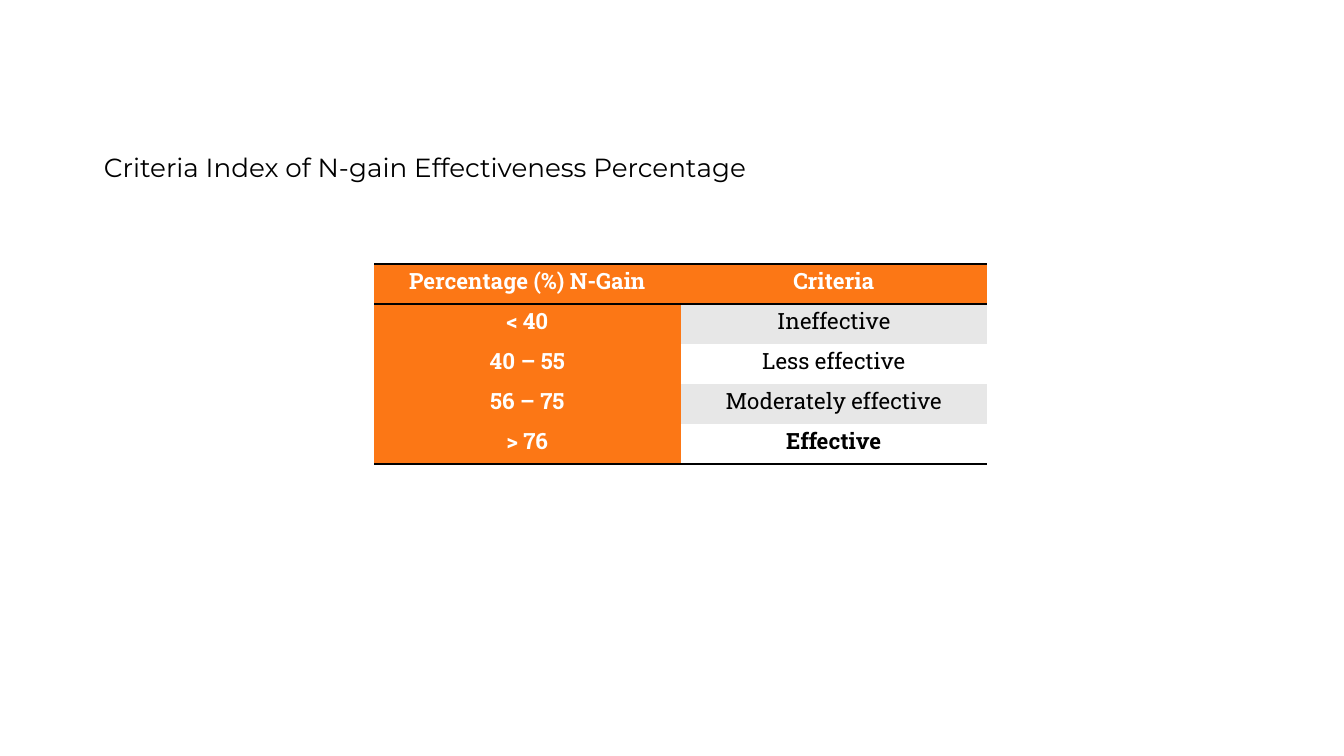
from lxml import etree
from pptx import Presentation
from pptx.dml.color import RGBColor
from pptx.enum.text import MSO_ANCHOR, PP_ALIGN
from pptx.oxml.ns import qn
from pptx.util import Inches, Pt

LEFT, CENTER = PP_ALIGN.LEFT, PP_ALIGN.CENTER
TOP = MSO_ANCHOR.TOP

TITLE = "Criteria Index of N-gain Effectiveness Percentage"
ROWS = [
    ("Percentage (%) N-Gain", "Criteria"),
    ("< 40", "Ineffective"),
    ("40 – 55", "Less effective"),
    ("56 – 75", "Moderately effective"),
    ("> 76", "Effective"),
]
ORANGE, GREY, WHITE, BLACK = "FC7715", "E7E7E7", "FFFFFF", "000000"
TABLE_LEFT, TABLE_TOP = 3.71, 2.62
COL_W, ROW_H = 3.04, 0.397
RULE_PT = 2


def rgb(color):
    return RGBColor.from_string(color)


def write(tf, text, font, size, color=BLACK, bold=False, align=LEFT, spacing=1.0):
    p = tf.paragraphs[0]
    p.alignment = align
    p.line_spacing = spacing
    r = p.add_run()
    r.text = text
    r.font.name, r.font.size, r.font.bold = font, Pt(size), bold
    r.font.color.rgb = rgb(color)


def set_borders(cell, ruled):
    """Draw black rules on the sides named in ruled and clear the others."""
    tcPr = cell._tc.get_or_add_tcPr()
    for i, side in enumerate("LRTB"):
        ln = etree.Element(qn(f"a:ln{side}"))
        if side in ruled:
            ln.set("w", str(Pt(RULE_PT)))
            fill = etree.SubElement(ln, qn("a:solidFill"))
            etree.SubElement(fill, qn("a:srgbClr"), val=BLACK)
        else:
            etree.SubElement(ln, qn("a:noFill"))
        tcPr.insert(i, ln)


def add_title(s):
    title = s.shapes.title
    title.left, title.top = Inches(0.9), Inches(1.32)
    title.width, title.height = Inches(9.24), Inches(0.84)
    tf = title.text_frame
    tf.word_wrap = True
    tf.vertical_anchor = TOP
    tf.margin_left = tf.margin_right = tf.margin_top = tf.margin_bottom = Inches(0.13)
    write(tf, TITLE, "Montserrat", 18.7, spacing=1.15)


def add_criteria_table(s):
    n_rows, n_cols = len(ROWS), len(ROWS[0])
    table = s.shapes.add_table(
        n_rows, n_cols, Inches(TABLE_LEFT), Inches(TABLE_TOP),
        Inches(COL_W * n_cols), Inches(ROW_H * n_rows)).table
    table.first_row = table.horz_banding = False
    last = n_rows - 1
    for i, row in enumerate(ROWS):
        table.rows[i].height = Inches(ROW_H)
        ruled = ("T" if i in (0, 1) else "") + ("B" if i in (0, last) else "")
        for j, text in enumerate(row):
            cell = table.cell(i, j)
            heading = i == 0 or j == 0
            cell.margin_left = cell.margin_right = Inches(0.1)
            cell.margin_top = cell.margin_bottom = 0
            cell.vertical_anchor = TOP
            cell.fill.solid()
            cell.fill.fore_color.rgb = rgb(ORANGE if heading else GREY if i % 2 else WHITE)
            set_borders(cell, ruled)
            write(cell.text_frame, text, "Roboto Slab", 16,
                  color=WHITE if heading else BLACK,
                  bold=heading or i == last, align=CENTER, spacing=1.07)


def main():
    prs = Presentation()
    prs.slide_width, prs.slide_height = Inches(13.33), Inches(7.5)
    s = prs.slides.add_slide(prs.slide_layouts[5])
    add_title(s)
    add_criteria_table(s)
    prs.save("out.pptx")


if __name__ == "__main__":
    main()
